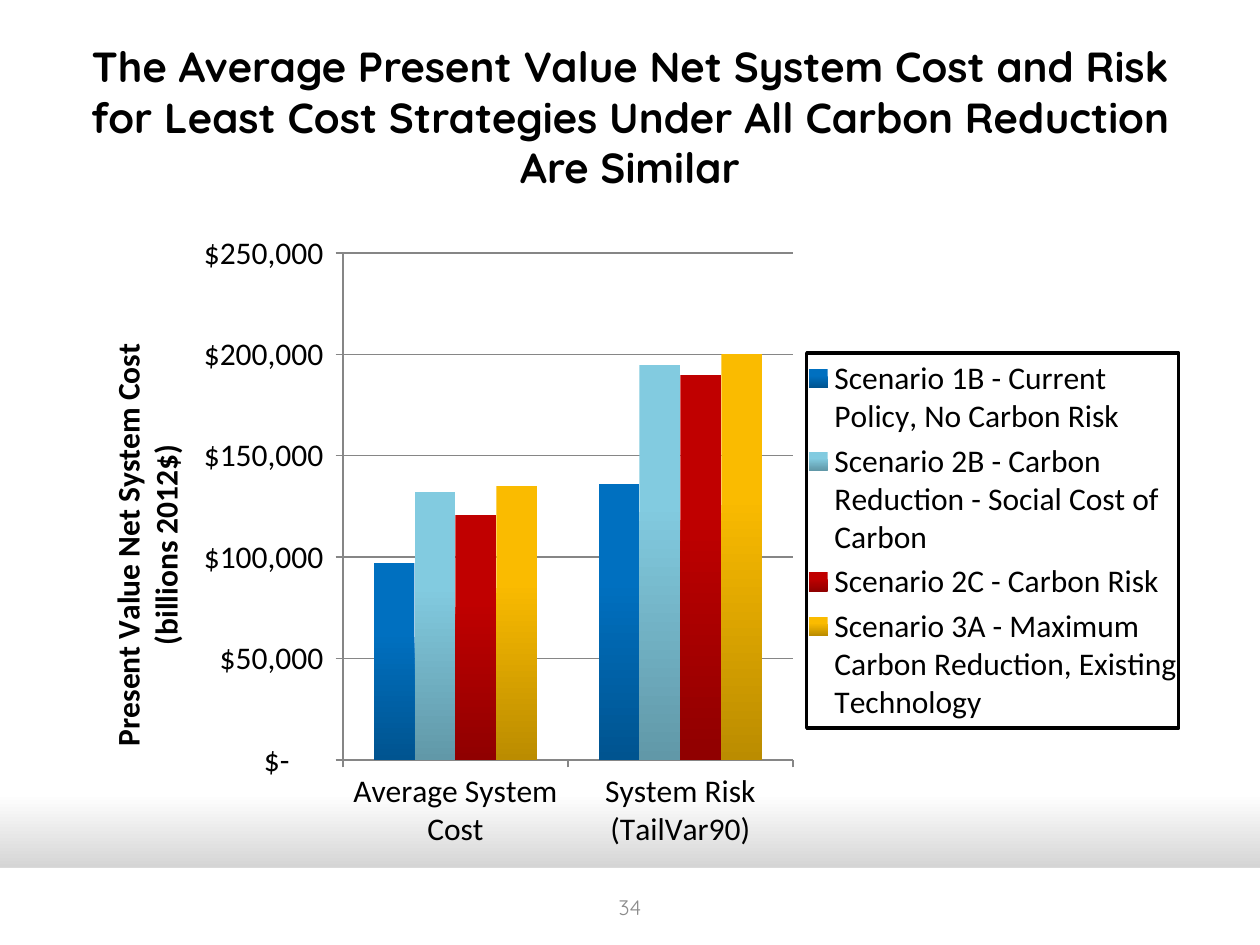
"""Build a slide with a clustered column chart of system cost and risk by scenario."""
from dataclasses import dataclass

from lxml import etree
from pptx import Presentation
from pptx.chart.data import CategoryChartData
from pptx.dml.color import RGBColor
from pptx.enum.chart import XL_CHART_TYPE, XL_LEGEND_POSITION, XL_TICK_MARK
from pptx.enum.shapes import MSO_SHAPE
from pptx.enum.text import MSO_ANCHOR, PP_ALIGN
from pptx.oxml import parse_xml
from pptx.oxml.ns import nsdecls, qn
from pptx.util import Emu, Pt

COLUMNS = XL_CHART_TYPE.COLUMN_CLUSTERED
LEGEND_RIGHT = XL_LEGEND_POSITION.RIGHT
TICK_OUTSIDE = XL_TICK_MARK.OUTSIDE
RECTANGLE = MSO_SHAPE.RECTANGLE
MIDDLE = MSO_ANCHOR.MIDDLE
CENTER = PP_ALIGN.CENTER

TITLE = ("The Average Present Value Net System Cost and Risk for Least Cost "
         "Strategies Under All Carbon Reduction Are Similar")
PAGE_NUMBER = "34"
AXIS_TITLE = "Present Value Net System Cost (billions 2012$)"
DOLLARS = '_("$"* #,##0_);_("$"* \\(#,##0\\);_("$"* "-"??_);_(@_)'
CATEGORIES = ["Average System Cost", "System Risk (TailVar90)"]
SCENARIOS = [
    ("Scenario 1B - Current Policy, No Carbon Risk", (97000, 136000), "0070C0"),
    ("Scenario 2B - Carbon Reduction - Social Cost of Carbon", (132000, 195000), "82CBE0"),
    ("Scenario 2C - Carbon Risk", (121000, 190000), "C00000"),
    ("Scenario 3A - Maximum Carbon Reduction, Existing Technology", (135000, 200000), "FABB00"),
]

PAGE_SIZE = (1260, 945)
TITLE_AREA = (63, 38, 1134, 157)
CHART_AREA = (63, 220, 1134, 640)
FOOTER_AREA = (0, 868, 1260, 77)
NUMBER_AREA = (483, 882, 294, 50)
PLOT_AREA = (343, 253, 450, 507)
LEGEND_AREA = (815, 353, 372, 375)
AXIS_TITLE_CORNER = (100, 338)


@dataclass(frozen=True)
class Theme:
    heading_font: str = "Quicksand"
    chart_font: str = "Calibri"
    black: str = "000000"
    white: str = "FFFFFF"
    shade: str = "A6A6A6"
    muted: str = "8C8C8C"
    grid: str = "868686"
    title_size: int = 24
    chart_size: int = 18
    number_size: int = 12


THEME = Theme()


def px(length):
    return Emu(round(length * 914400 / 126))


def color(code):
    return RGBColor.from_string(code)


def style(font, name, size, code, bold=False):
    font.name, font.size, font.bold = name, Pt(size), bold
    font.color.rgb = color(code)


def write(box, text, size, code, bold=False):
    frame = box.text_frame
    frame.text = text
    frame.word_wrap = True
    frame.vertical_anchor = MIDDLE
    para = frame.paragraphs[0]
    para.alignment = CENTER
    style(para.runs[0].font, THEME.heading_font, size, code, bold)


def shade_down(fill, stops):
    fill.gradient()
    fill.gradient_angle = 270
    for stop, (position, code) in zip(fill.gradient_stops, stops):
        stop.position = position
        stop.color.rgb = color(code)


def darker(code):
    return "".join(f"{int(code[i:i + 2], 16) * 3 // 4:02X}" for i in (0, 2, 4))


def lay_out(element, index, area, inner=False):
    """Pin a chart part to a page area given in px."""
    for old in element.findall(qn("c:layout")):
        element.remove(old)
    left, top, width, height = CHART_AREA
    values = [(area[0] - left) / width, (area[1] - top) / height]
    values += [length / whole for length, whole in zip(area[2:], (width, height))]
    layout = parse_xml(f"<c:layout {nsdecls('c')}><c:manualLayout/></c:layout>")
    settings = [("layoutTarget", "inner")] if inner else []
    settings += [("xMode", "edge"), ("yMode", "edge")]
    settings += [(key, f"{value:.4f}") for key, value in zip("xywh", values)]
    for key, value in settings:
        etree.SubElement(layout[0], qn(f"c:{key}")).set("val", value)
    element.insert(index, layout)


def style_axes(chart):
    value_axis = chart.value_axis
    value_axis.minimum_scale, value_axis.maximum_scale = 0, 250000
    value_axis.major_unit = 50000
    value_axis.tick_labels.number_format = DOLLARS
    value_axis.tick_labels.number_format_is_linked = False
    value_axis.has_major_gridlines = True
    title = value_axis.axis_title
    title.text_frame.text = AXIS_TITLE
    style(title.text_frame.paragraphs[0].runs[0].font,
          THEME.chart_font, THEME.chart_size, THEME.black, True)
    lay_out(title._element, 1, AXIS_TITLE_CORNER)
    for axis in (value_axis, chart.category_axis):
        axis.major_tick_mark = TICK_OUTSIDE
    for part in (value_axis, chart.category_axis, value_axis.major_gridlines):
        part.format.line.color.rgb = color(THEME.grid)
        part.format.line.width = Pt(0.75)


def style_legend(chart):
    chart.has_legend = True
    legend = chart.legend
    legend.position = LEGEND_RIGHT
    legend.include_in_layout = False
    style(legend.font, THEME.chart_font, THEME.chart_size, THEME.black)
    lay_out(legend._element, 1, LEGEND_AREA)
    border = parse_xml(
        f'<c:spPr {nsdecls("c", "a")}><a:ln w="{Pt(2)}"><a:solidFill>'
        f'<a:srgbClr val="{THEME.black}"/></a:solidFill></a:ln></c:spPr>')
    legend._element.find(qn("c:overlay")).addnext(border)


def add_cost_chart(page):
    data = CategoryChartData()
    data.categories = CATEGORIES
    for name, values, _ in SCENARIOS:
        data.add_series(name, values)
    chart = page.shapes.add_chart(COLUMNS, *map(px, CHART_AREA), data).chart
    chart.has_title = False
    style(chart.font, THEME.chart_font, THEME.chart_size, THEME.black)
    plot = chart.plots[0]
    plot.vary_by_categories = False
    plot.gap_width, plot.overlap = 150, 0
    for series, (_, _, code) in zip(plot.series, SCENARIOS):
        shade_down(series.format.fill, [(0.35, code), (1, darker(code))])
    style_axes(chart)
    style_legend(chart)
    lay_out(chart._chartSpace.chart.plotArea, 0, PLOT_AREA, inner=True)


def main():
    deck = Presentation()
    deck.slide_width, deck.slide_height = map(px, PAGE_SIZE)
    page = deck.slides.add_slide(deck.slide_layouts[5])
    shade_down(page.background.fill, [(0.84, THEME.white), (1, THEME.shade)])

    footer = page.shapes.add_shape(RECTANGLE, *map(px, FOOTER_AREA))
    footer.shadow.inherit = False
    footer.fill.solid()
    footer.fill.fore_color.rgb = color(THEME.white)
    footer.line.fill.background()

    title = page.shapes.title
    title.left, title.top, title.width, title.height = map(px, TITLE_AREA)
    write(title, TITLE, THEME.title_size, THEME.black, True)
    add_cost_chart(page)
    number = page.shapes.add_textbox(*map(px, NUMBER_AREA))
    write(number, PAGE_NUMBER, THEME.number_size, THEME.muted)
    deck.save("out.pptx")


if __name__ == "__main__":
    main()
